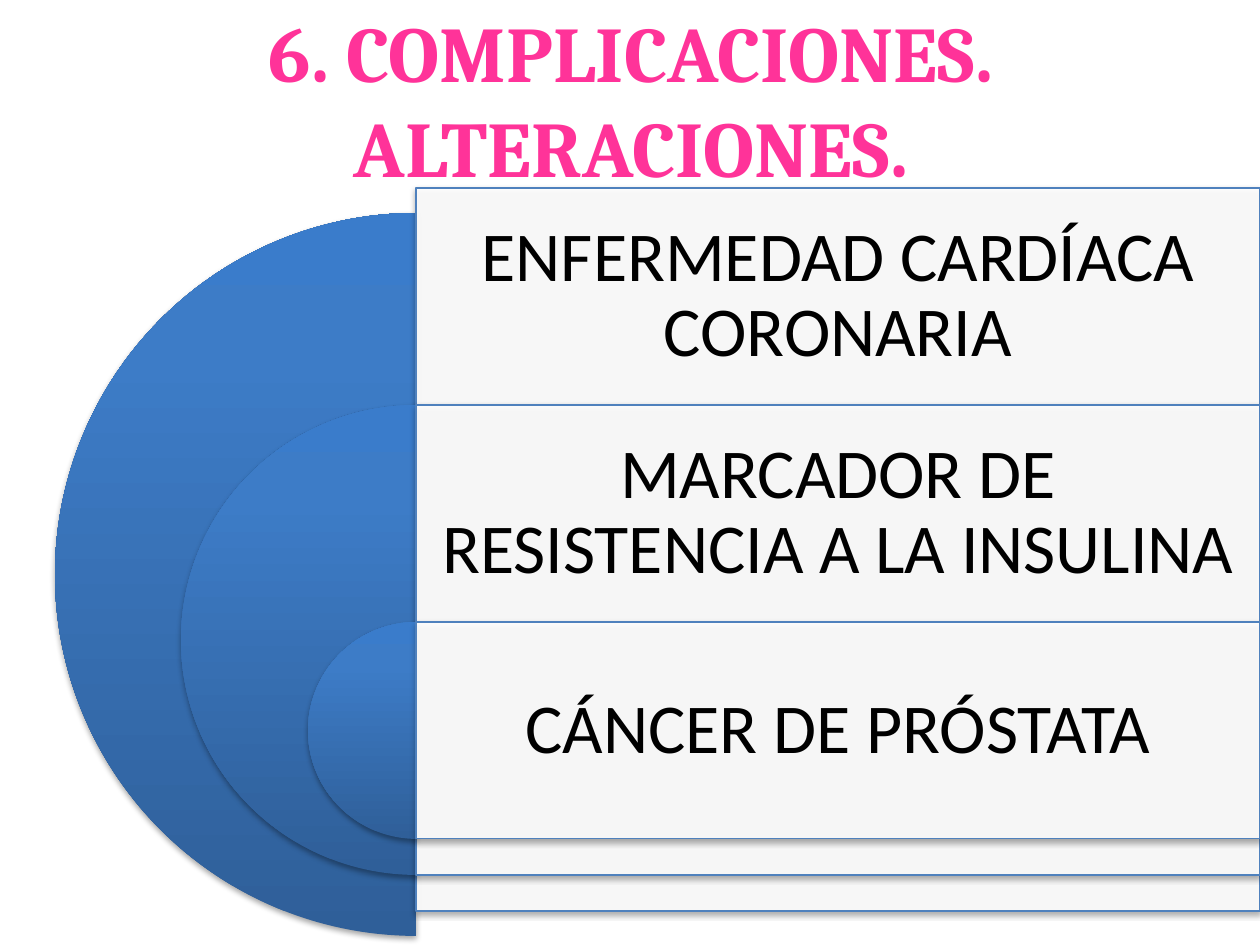
from lxml import etree
from pptx import Presentation
from pptx import util as u
from pptx.dml.color import RGBColor
from pptx.enum import shapes, text
from pptx.oxml import parse_xml
from pptx.oxml.ns import nsdecls, qn

PX = 914400 // 126
PINK = RGBColor(0xFF, 0x33, 0x99)
BLUE = RGBColor(0x4F, 0x81, 0xBD)
DARK = RGBColor(0x2F, 0x5F, 0x99)
MID = RGBColor(0x3D, 0x7C, 0xC7)
LIGHT = RGBColor(0x3A, 0x7C, 0xCB)
WHITE = RGBColor(0xFF, 0xFF, 0xFF)
BLACK = RGBColor(0, 0, 0)

EDGE = 416      # straight side of the half discs, left side of the panels
WIDE = 844
ROW = 217
# wording, disc top, panel top, height of both
ITEMS = [
    ("ENFERMEDAD CARDÍACA CORONARIA", 213, 188, 723),
    ("MARCADOR DE RESISTENCIA A LA INSULINA", 405, 405, 470),
    ("CÁNCER DE PRÓSTATA", 622, 622, 217),
]


def scale(*sizes):
    return [u.Emu(size * PX) for size in sizes]


def add_shade(shape):
    """Give the shape a soft shadow below; call once fill and line are set."""
    shape._element.spPr.append(parse_xml(
        f'<a:effectLst {nsdecls("a")}><a:outerShdw blurRad="40000" '
        'dist="23000" dir="5400000" rotWithShape="0"><a:srgbClr val="000000">'
        '<a:alpha val="35000"/></a:srgbClr></a:outerShdw></a:effectLst>'))


def add_disc(slide, top, size):
    """Add the left half of a disc, shaded from dark at the foot to light."""
    disc = slide.shapes.add_shape(
        shapes.MSO_SHAPE.PIE, *scale(EDGE - size // 2, top, size, size))
    disc.adjustments[0] = 54
    disc.adjustments[1] = 162
    stops = "".join(
        f'<a:gs pos="{place * 1000}"><a:srgbClr val="{tone}"/></a:gs>'
        for place, tone in ((0, DARK), (80, MID), (100, LIGHT)))
    disc._element.spPr.append(parse_xml(
        f'<a:gradFill {nsdecls("a")} rotWithShape="1"><a:gsLst>{stops}'
        '</a:gsLst><a:lin ang="16200000" scaled="0"/></a:gradFill>'))
    disc.line.fill.background()
    add_shade(disc)


def add_panel(slide, top, high):
    panel = slide.shapes.add_shape(
        shapes.MSO_SHAPE.RECTANGLE, *scale(EDGE, top, WIDE, high))
    panel.fill.solid()
    panel.fill.fore_color.rgb = WHITE
    tone = panel._element.spPr.find(qn("a:solidFill"))[0]
    etree.SubElement(tone, qn("a:alpha")).set("val", "90000")
    panel.line.color.rgb = BLUE
    panel.line.width = u.Pt(0.75)
    add_shade(panel)


def add_text(slide, words, place, face, size, color, inset, bold=False):
    frame = slide.shapes.add_textbox(*scale(*place)).text_frame
    frame.word_wrap = True
    frame.vertical_anchor = text.MSO_ANCHOR.MIDDLE
    frame.margin_left, frame.margin_top = scale(*inset)
    frame.margin_right, frame.margin_bottom = scale(*inset)
    line = frame.paragraphs[0]
    line.text = words
    line.alignment = text.PP_ALIGN.CENTER
    line.font.name = face
    line.font.size = u.Pt(size)
    line.font.bold = bold
    line.font.color.rgb = color
    return line


def main():
    deck = Presentation()
    deck.slide_width, deck.slide_height = u.Inches(10), u.Inches(7.5)
    slide = deck.slides.add_slide(deck.slide_layouts[6])
    add_text(slide, "6. COMPLICACIONES. ALTERACIONES.", (64, 0, 1134, 197),
             "Cambria", 45, PINK, (13, 6), bold=True)
    for words, crest, top, high in ITEMS:
        add_disc(slide, crest, high)
        add_panel(slide, top, high)
        line = add_text(slide, words, (EDGE, top, WIDE, ROW),
                        "Calibri", 40, BLACK, (21, 21))
        line.line_spacing = 0.9
    deck.save("out.pptx")


if __name__ == "__main__":
    main()
